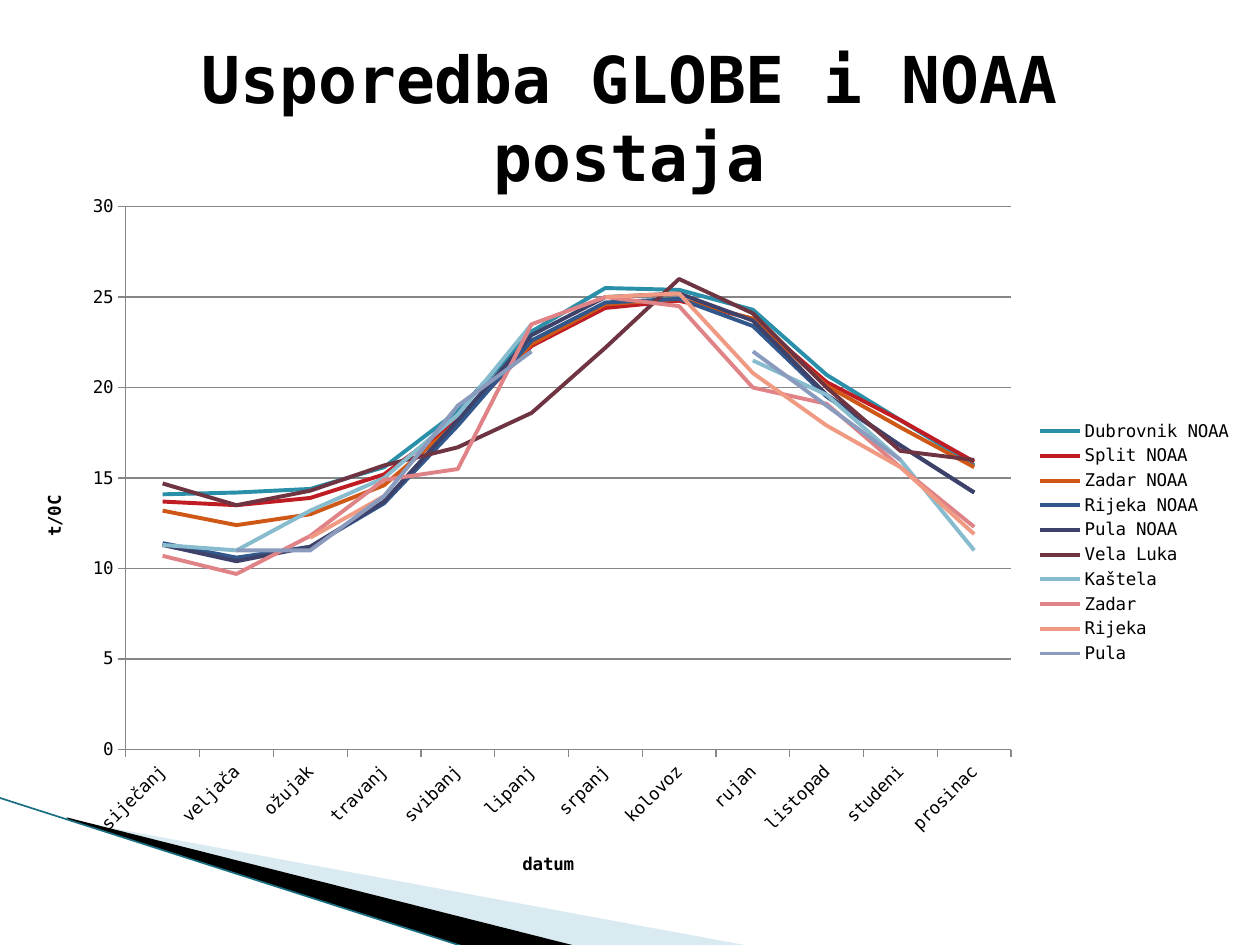
"""Build a slide comparing monthly sea temperatures of GLOBE and NOAA stations."""
import lxml.etree
import pptx
import pptx.chart.data
import pptx.dml.color
import pptx.enum.chart
import pptx.enum.shapes
import pptx.enum.text
import pptx.oxml.ns
import pptx.util

RGBColor = pptx.dml.color.RGBColor
BLACK = RGBColor(0x00, 0x00, 0x00)
GREY = RGBColor(0x86, 0x86, 0x86)
PALE_BLUE = RGBColor(0xA0, 0xCB, 0xDC)
DARK_TEAL = RGBColor(0x1A, 0x6E, 0x82)
FONT = "DejaVu Sans Mono"
qn = pptx.oxml.ns.qn

MONTHS = ["siječanj", "veljača", "ožujak", "travanj", "svibanj", "lipanj",
          "srpanj", "kolovoz", "rujan", "listopad", "studeni", "prosinac"]
STATIONS = [
    ("Dubrovnik NOAA", RGBColor(0x2A, 0x8F, 0xA9),
     [14.1, 14.2, 14.4, 15.6, 18.7, 23.1, 25.5, 25.4, 24.3, 20.7, 18.2, 15.7]),
    ("Split NOAA", RGBColor(0xC0, 0x1C, 0x24),
     [13.7, 13.5, 13.9, 15.2, 18.2, 22.3, 24.4, 24.8, 23.8, 20.3, 18.2, 15.9]),
    ("Zadar NOAA", RGBColor(0xD0, 0x58, 0x17),
     [13.2, 12.4, 13, 14.6, 18.1, 22.4, 24.6, 24.9, 23.8, 20.1, 17.8, 15.6]),
    ("Rijeka NOAA", RGBColor(0x32, 0x57, 0x8A),
     [11.4, 10.6, 11.2, 13.6, 17.9, 22.6, 24.7, 24.9, 23.4, 19.5, 16.8, 14.2]),
    ("Pula NOAA", RGBColor(0x3E, 0x42, 0x6A),
     [11.3, 10.4, 11.2, 13.7, 18.2, 22.9, 25, 25.2, 23.7, 19.6, 16.8, 14.2]),
    ("Vela Luka", RGBColor(0x6E, 0x34, 0x41),
     [14.7, 13.5, 14.3, 15.7, 16.7, 18.6, 22.2, 26, 24.1, 20, 16.5, 16]),
    ("Kaštela", RGBColor(0x87, 0xBC, 0xCE),
     [11.3, 11, 13.2, 15, 18.5, 23.5, None, None, 21.5, 19.6, 16, 11]),
    ("Zadar", RGBColor(0xE0, 0x83, 0x87),
     [10.7, 9.7, 11.8, 14.9, 15.5, 23.5, 25, 24.5, 20, 19.1, 15.6, 12.3]),
    ("Rijeka", RGBColor(0xF0, 0x9A, 0x83),
     [None, None, 11.7, 14, None, None, 25, 25.2, 20.8, 17.9, 15.6, 11.9]),
    ("Pula", RGBColor(0x8B, 0x9B, 0xBE),
     [None, 11, 11, 14, 19, 22, None, None, 22, 19, 16, None]),
]

deck = pptx.Presentation()
deck.slide_width = pptx.util.Inches(10)
deck.slide_height = pptx.util.Inches(7.5)
page = deck.slides.add_slide(deck.slide_layouts[6])


def place(across, down):
    """Turn shares of the slide into a pair of lengths."""
    return int(deck.slide_width * across), int(deck.slide_height * down)


def set_layout(element, index, **shares):
    """Pin a chart part at shares of the chart's size."""
    for old in element.findall(qn("c:layout")):
        element.remove(old)
    layout = lxml.etree.Element(qn("c:layout"))
    manual = lxml.etree.SubElement(layout, qn("c:manualLayout"))
    if "w" in shares:
        lxml.etree.SubElement(manual, qn("c:layoutTarget")).set("val", "inner")
    for name in ("xMode", "yMode"):
        lxml.etree.SubElement(manual, qn("c:" + name)).set("val", "edge")
    for name, share in shares.items():
        lxml.etree.SubElement(manual, qn("c:" + name)).set("val", str(share))
    element.insert(index, layout)


WEDGES = [
    (PALE_BLUE, 40, [(0.055, 0.868), (0.595, 1.001), (0.456, 1.001), (0.055, 0.867)]),
    (BLACK, 100, [(0.053, 0.865), (0.457, 1.001), (0.372, 1.003), (0.054, 0.867)]),
]
for color, opacity, corners in WEDGES:
    points = [place(*corner) for corner in corners]
    builder = page.shapes.build_freeform(*points[0])
    builder.add_line_segments(points[1:])
    wedge = builder.convert_to_shape()
    wedge.shadow.inherit = False
    wedge.fill.solid()
    wedge.fill.fore_color.rgb = color
    wedge.line.fill.background()
    if opacity < 100:
        fill_color = wedge.fill._xPr.find(".//" + qn("a:srgbClr"))
        lxml.etree.SubElement(fill_color, qn("a:alpha")).set("val", str(opacity * 1000))

edge = page.shapes.add_connector(
    pptx.enum.shapes.MSO_CONNECTOR.STRAIGHT, *place(-0.001, 0.844), *place(0.371, 1.003))
edge.line.color.rgb = DARK_TEAL
edge.line.width = pptx.util.Pt(0.95)
lxml.etree.SubElement(edge._element.spPr, qn("a:effectLst"))

box = page.shapes.add_textbox(*place(0.05, 0.04), *place(0.9, 0.167))
box.text_frame.word_wrap = True
box.text_frame.vertical_anchor = pptx.enum.text.MSO_ANCHOR.MIDDLE
para = box.text_frame.paragraphs[0]
para.text = "Usporedba GLOBE i NOAA postaja"
para.alignment = pptx.enum.text.PP_ALIGN.CENTER
span = para.runs[0]
span.font.name = FONT
span.font.size = pptx.util.Pt(36.9)
span.font.bold = True
span.font.color.rgb = BLACK

data = pptx.chart.data.CategoryChartData()
data.categories = MONTHS
for name, color, values in STATIONS:
    data.add_series(name, values)
chart = page.shapes.add_chart(
    pptx.enum.chart.XL_CHART_TYPE.LINE,
    *place(0.012, 0.196), *place(0.976, 0.756), data).chart
chart.has_title = False
chart.font.name = FONT
chart.font.size = pptx.util.Pt(10)
chart.font.color.rgb = BLACK
chart.has_legend = True
chart.legend.position = pptx.enum.chart.XL_LEGEND_POSITION.RIGHT
chart.legend.include_in_layout = False
chart.plots[0].vary_by_categories = False
set_layout(chart._chartSpace.chart.plotArea, 0, x=0.09, y=0.03, w=0.72, h=0.76)

for series, (name, color, values) in zip(chart.plots[0].series, STATIONS):
    series.smooth = False
    series.marker.style = pptx.enum.chart.XL_MARKER_STYLE.NONE
    series.format.line.color.rgb = color
    series.format.line.width = pptx.util.Pt(2.25)

AXES = [(chart.category_axis, "datum", 0.41, 0.93), (chart.value_axis, "t/0C", 0.02, 0.43)]
for axis, label, left, top in AXES:
    axis.major_tick_mark = pptx.enum.chart.XL_TICK_MARK.OUTSIDE
    axis.minor_tick_mark = pptx.enum.chart.XL_TICK_MARK.NONE
    axis.format.line.color.rgb = GREY
    axis.format.line.width = pptx.util.Pt(0.75)
    axis.tick_labels.font.size = pptx.util.Pt(10)
    para = axis.axis_title.text_frame.paragraphs[0]
    para.text = label
    span = para.runs[0]
    span.font.name = FONT
    span.font.size = pptx.util.Pt(10)
    span.font.bold = True
    span.font.color.rgb = BLACK
    set_layout(axis.axis_title._element, 1, x=left, y=top)

vertical = chart.value_axis.axis_title.text_frame._txBody.bodyPr
vertical.set("rot", "-5400000")
vertical.set("vert", "horz")
chart.category_axis._element.find(qn("c:txPr")).bodyPr.set("rot", "-2700000")
chart.value_axis.minimum_scale = 0
chart.value_axis.maximum_scale = 30
chart.value_axis.major_unit = 5
chart.value_axis.has_major_gridlines = True
chart.value_axis.major_gridlines.format.line.color.rgb = GREY
chart.value_axis.major_gridlines.format.line.width = pptx.util.Pt(0.75)

deck.save("out.pptx")
